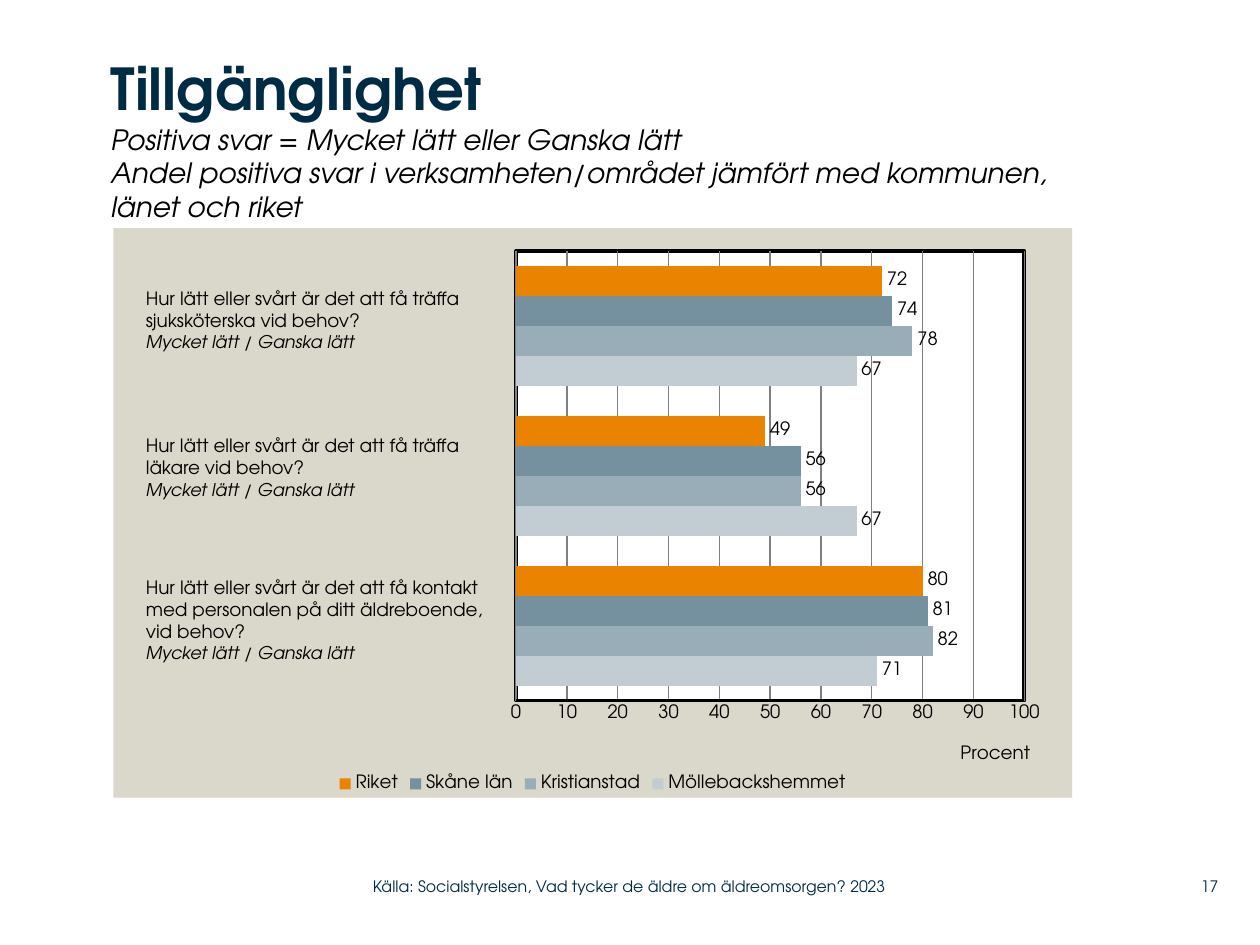
"""Build the slide on accessibility, with a bar chart comparing four areas."""
from lxml import etree
from pptx import Presentation
from pptx.chart.data import CategoryChartData
from pptx.dml.color import RGBColor
from pptx.enum.chart import XL_CHART_TYPE, XL_LABEL_POSITION, XL_LEGEND_POSITION, XL_TICK_MARK
from pptx.enum.text import MSO_ANCHOR, PP_ALIGN
from pptx.oxml import parse_xml
from pptx.oxml.ns import nsdecls, qn
from pptx.util import Inches, Pt

FONT = "TeX Gyre Adventor"
NAVY = "002B45"
BLACK = "000000"


def color(value):
    return RGBColor.from_string(value)


def add_text(place, paragraphs, inset=(0, 0), anchor=MSO_ANCHOR.TOP, align=PP_ALIGN.LEFT):
    """Add a text box; each paragraph is a list of (text, size, colour, bold, italic)."""
    box = page.shapes.add_textbox(*[Inches(length) for length in place])
    frame = box.text_frame
    frame.word_wrap = True
    frame.vertical_anchor = anchor
    frame.margin_left = frame.margin_right = Inches(inset[0])
    frame.margin_top = frame.margin_bottom = Inches(inset[1])
    for index, spans in enumerate(paragraphs):
        para = frame.add_paragraph() if index else frame.paragraphs[0]
        para.alignment = align
        for number, (text, size, ink, bold, italic) in enumerate(spans):
            if number:
                para.add_line_break()
            span = para.add_run()
            span.text = text
            span.font.name = FONT
            span.font.size = Pt(size)
            span.font.bold = bold
            span.font.italic = italic
            span.font.color.rgb = color(ink)


deck = Presentation()
deck.slide_width = Inches(10)
deck.slide_height = Inches(7.5)
page = deck.slides.add_slide(deck.slide_layouts[6])

areas = [
    ("Möllebackshemmet", (71, 67, 67), "C2CDD3"),
    ("Kristianstad", (82, 56, 78), "99ADB9"),
    ("Skåne län", (81, 56, 74), "75909F"),
    ("Riket", (80, 49, 72), "E98300"),
]
data = CategoryChartData()
data.categories = ["1", "2", "3"]
for name, values, fill in areas:
    data.add_series(name, values)
chart = page.shapes.add_chart(
    XL_CHART_TYPE.BAR_CLUSTERED, Inches(0.9), Inches(1.81), Inches(7.61), Inches(4.52), data
).chart
chart.has_title = False
chart.font.name = FONT
chart.font.size = Pt(10.5)
chart.font.color.rgb = color(BLACK)
chart.has_legend = True
chart.legend.position = XL_LEGEND_POSITION.BOTTOM
chart.legend.include_in_layout = False

plot = chart.plots[0]
plot.gap_width = 100
plot.overlap = 0
plot.vary_by_categories = False
for series, (name, values, fill) in zip(plot.series, areas):
    series.format.fill.solid()
    series.format.fill.fore_color.rgb = color(fill)
    labels = series.data_labels
    labels.show_value = True
    labels.position = XL_LABEL_POSITION.OUTSIDE_END

chart.category_axis.visible = False
axis = chart.value_axis
axis.minimum_scale = 0
axis.maximum_scale = 100
axis.major_unit = 10
axis.major_tick_mark = XL_TICK_MARK.NONE
axis.minor_tick_mark = XL_TICK_MARK.NONE
axis.format.line.color.rgb = color(BLACK)
axis.format.line.width = Pt(2)
axis.major_gridlines.format.line.color.rgb = color("808080")
axis.major_gridlines.format.line.width = Pt(0.75)
span = axis.axis_title.text_frame.paragraphs[0].add_run()
span.text = "Procent"
span.font.name = FONT
span.font.size = Pt(10.5)
span.font.bold = False
span.font.color.rgb = color(BLACK)


def make_layout(target, **places):
    layout = etree.Element(qn("c:layout"))
    manual = etree.SubElement(layout, qn("c:manualLayout"))
    if target:
        etree.SubElement(manual, qn("c:layoutTarget")).set("val", target)
    for side in ("x", "y"):
        etree.SubElement(manual, qn(f"c:{side}Mode")).set("val", "edge")
    for key, value in places.items():
        etree.SubElement(manual, qn(f"c:{key}")).set("val", str(value))
    return layout


title = axis.axis_title._element
for old in title.findall(qn("c:layout")):
    title.remove(old)
title.find(qn("c:tx")).addnext(make_layout(None, x=0.88, y=0.9))
plot_area = chart._chartSpace.chart.plotArea
for old in plot_area.findall(qn("c:layout")):
    plot_area.remove(old)
plot_area.insert(0, make_layout("inner", x=0.42, y=0.04, w=0.53, h=0.79))

plot_format = parse_xml(
    f'<c:spPr {nsdecls("c", "a")}><a:solidFill><a:srgbClr val="FFFFFF"/></a:solidFill>'
    '<a:ln w="25400"><a:solidFill><a:srgbClr val="000000"/></a:solidFill></a:ln></c:spPr>'
)
plot_area.append(plot_format)
back_format = parse_xml(
    f'<c:spPr {nsdecls("c", "a")}><a:solidFill><a:srgbClr val="DAD7CB"/></a:solidFill>'
    "<a:ln><a:noFill/></a:ln></c:spPr>"
)
chart._chartSpace.chart.addnext(back_format)

add_text((0.88, 0.42, 7.77, 1.39), [[
    ("Tillgänglighet", 33, NAVY, True, False),
    ("Positiva svar = Mycket lätt eller Ganska lätt", 16, BLACK, False, True),
    ("Andel positiva svar i verksamheten/området jämfört med kommunen, länet och riket",
     16, BLACK, False, True),
]])

questions = [
    (2.23, 2.99, 0.81, ["Hur lätt eller svårt är det att få träffa sjuksköterska vid behov?"]),
    (3.4, 2.93, 0.81, ["Hur lätt eller svårt är det att få träffa", "läkare vid behov?"]),
    (4.52, 3.01, 0.98, ["Hur lätt eller svårt är det att få kontakt",
                        "med personalen på ditt äldreboende,", "vid behov?"]),
]
for top, width, height, lines in questions:
    paragraphs = [[(line, 10.5, BLACK, False, False)] for line in lines]
    paragraphs.append([("Mycket lätt / Ganska lätt", 10, BLACK, False, True)])
    add_text((1.06, top, width, height), paragraphs, inset=(0.1, 0.05))

add_text((9.2, 6.89, 0.47, 0.29), [[("17", 9, NAVY, False, False)]],
         anchor=MSO_ANCHOR.MIDDLE, align=PP_ALIGN.RIGHT)
add_text((2.96, 6.89, 4.43, 0.29),
         [[("Källa: Socialstyrelsen, Vad tycker de äldre om äldreomsorgen? 2023",
            9, NAVY, False, False)]], anchor=MSO_ANCHOR.MIDDLE)

deck.save("out.pptx")
